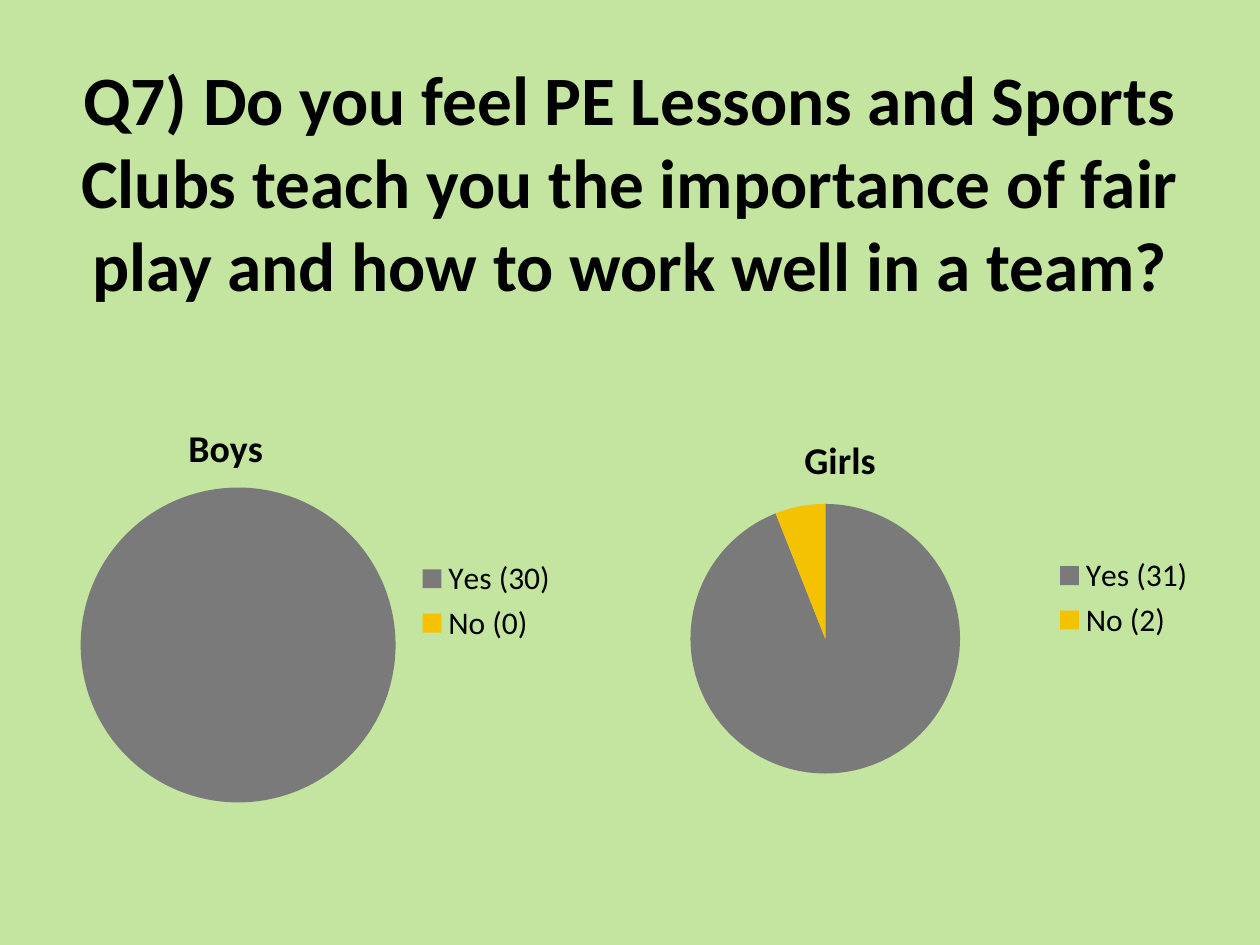
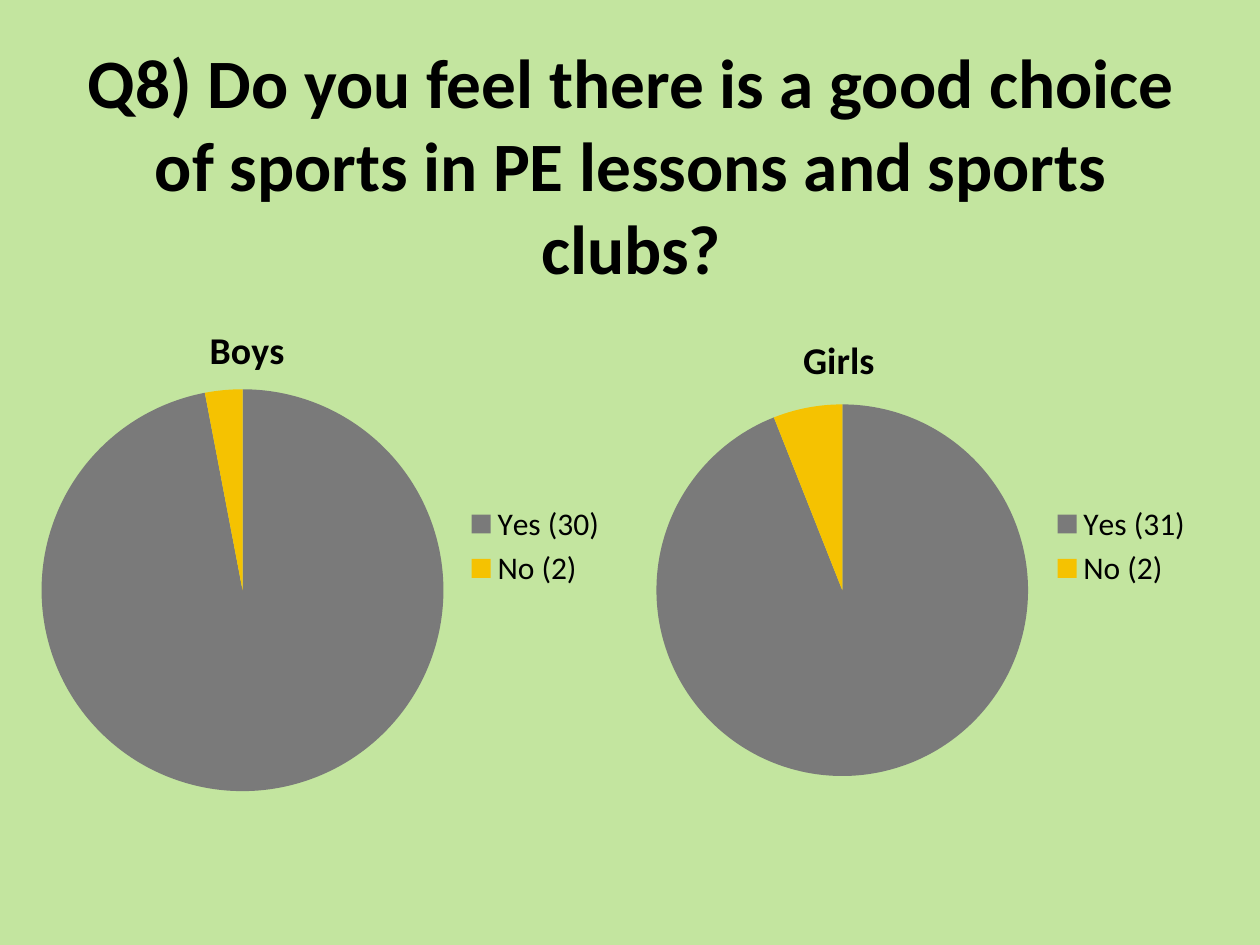
from pptx import Presentation
from pptx.chart.data import CategoryChartData as ChartData
from pptx.dml.color import RGBColor as Color
from pptx.enum.chart import XL_CHART_TYPE as ChartType, XL_LEGEND_POSITION as LegendSide
from pptx.enum.text import MSO_ANCHOR as Anchor, PP_ALIGN as Align
from pptx.oxml import parse_xml
from pptx.oxml.ns import nsdecls
from pptx.util import Inches, Pt

COLORS = {"background": "C3E59F", "text": "000000", "yes": "7A7A7A", "no": "F5C201"}
FONT = "Calibri"

QUESTIONS = [
    {
        "title": "Q7) Do you feel PE Lessons and Sports Clubs teach you "
                 "the importance of fair play and how to work well in a team?",
        "title_area": (0.5, 0.3, 9, 2.27),
        "pies": [
            {"group": "Boys", "answers": ("Yes (30)", "No (0)"), "shares": (100, 0),
             "area": (0.5, 2.88, 4.03, 3.78), "heading": (1.44, 3.29), "circle": (0.64, 3.87, 2.5)},
            {"group": "Girls", "answers": ("Yes (31)", "No (2)"), "shares": (94, 6),
             "area": (4.76, 3.2, 4.83, 3.09), "heading": (6.33, 3.38), "circle": (5.48, 4.0, 2.14)},
        ],
    },
    {
        "title": "Q8) Do you feel there is a good choice of sports "
                 "in PE lessons and sports clubs?",
        "title_area": (0.51, 0.52, 9, 1.56),
        "pies": [
            {"group": "Boys", "answers": ("Yes (30)", "No (2)"), "shares": (97, 3),
             "area": (0.2, 2.25, 4.72, 4.17), "heading": (1.61, 2.51), "circle": (0.33, 3.09, 3.19)},
            {"group": "Girls", "answers": ("Yes (31)", "No (2)"), "shares": (94, 6),
             "area": (5.08, 2.25, 4.49, 4.17), "heading": (6.32, 2.59), "circle": (5.21, 3.21, 2.95)},
        ],
    },
]


def style_font(font, size, bold=False):
    font.name = FONT
    font.size = Pt(size)
    font.bold = bold
    font.color.rgb = Color.from_string(COLORS["text"])


def place_part(part, index, area, left, top, diameter=None):
    for old_layout in part.xpath("./c:layout"):
        part.remove(old_layout)
    chart_left, chart_top, width, height = area
    settings = [("xMode", "edge"), ("yMode", "edge"),
                ("x", (left - chart_left) / width), ("y", (top - chart_top) / height)]
    if diameter:
        settings.insert(0, ("layoutTarget", "inner"))
        settings += [("w", diameter / width), ("h", diameter / height)]
    tags = "".join(f'<c:{name} val="{value}"/>' for name, value in settings)
    part.insert(index, parse_xml(
        f'<c:layout {nsdecls("c")}><c:manualLayout>{tags}</c:manualLayout></c:layout>'))


deck = Presentation()
deck.slide_width = Inches(10)
deck.slide_height = Inches(7.5)

for question in QUESTIONS:
    page = deck.slides.add_slide(deck.slide_layouts[6])
    page.background.fill.solid()
    page.background.fill.fore_color.rgb = Color.from_string(COLORS["background"])

    box = page.shapes.add_textbox(*map(Inches, question["title_area"]))
    box.text_frame.word_wrap = True
    box.text_frame.vertical_anchor = Anchor.MIDDLE
    para = box.text_frame.paragraphs[0]
    para.alignment = Align.CENTER
    span = para.add_run()
    span.text = question["title"]
    style_font(span.font, 39.6, bold=True)

    for pie in question["pies"]:
        data = ChartData()
        data.categories = pie["answers"]
        data.add_series(pie["group"], pie["shares"])
        chart = page.shapes.add_chart(ChartType.PIE, *map(Inches, pie["area"]), data).chart
        style_font(chart.font, 18)

        chart.has_title = True
        span = chart.chart_title.text_frame.paragraphs[0].add_run()
        span.text = pie["group"]
        style_font(span.font, 21.6, bold=True)

        chart.has_legend = True
        chart.legend.position = LegendSide.RIGHT
        chart.legend.include_in_layout = False

        plot = chart.plots[0]
        plot.vary_by_categories = True
        for index, answer in enumerate(("yes", "no")):
            fill = plot.series[0].points[index].format.fill
            fill.solid()
            fill.fore_color.rgb = Color.from_string(COLORS[answer])

        heading = chart._chartSpace.xpath("./c:chart/c:title")[0]
        plot_area = chart._chartSpace.xpath("./c:chart/c:plotArea")[0]
        place_part(heading, 1, pie["area"], *pie["heading"])
        place_part(plot_area, 0, pie["area"], *pie["circle"])

deck.save("out.pptx")
